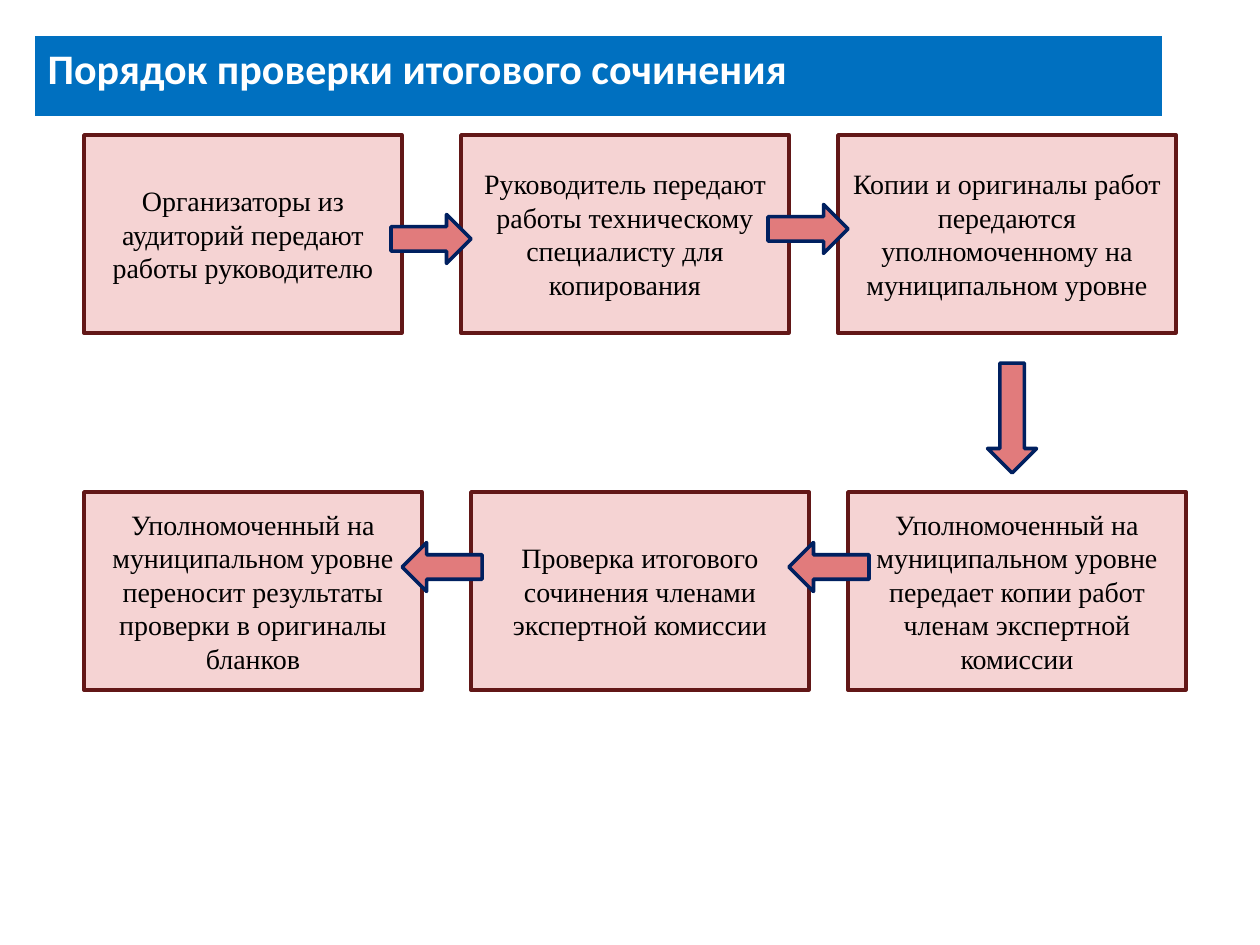
"""Build the slide on how final essays are checked."""
import pptx
import pptx.dml.color
import pptx.enum.shapes
import pptx.enum.text
import pptx.util

TITLE = "Порядок проверки итогового сочинения"
ROWS = [
    (135, [
        (84, 318, "Организаторы из аудиторий передают работы руководителю"),
        (461, 328, "Руководитель передают работы техническому специалисту для копирования"),
        (838, 338, "Копии и оригиналы работ передаются уполномоченному на муниципальном уровне"),
    ]),
    (492, [
        (848, 338, "Уполномоченный на муниципальном уровне передает копии работ членам экспертной комиссии"),
        (471, 338, "Проверка итогового сочинения членами экспертной комиссии"),
        (84, 338, "Уполномоченный на муниципальном уровне переносит результаты проверки в оригиналы бланков"),
    ]),
]
STEP_HEIGHT = 198
ARROWS = [
    (431, 239, 80, 0), (808, 229, 80, 0), (1012, 418, 110, 90),
    (829, 567, 80, 180), (442, 567, 80, 180),
]
ARROW_HEIGHT = 49
COLORS = {
    "banner": "0070C0", "banner_text": "FFFFFF",
    "step": "F5D3D3", "step_line": "621717", "step_text": "000000",
    "arrow": "E17B7C", "arrow_line": "002060",
}
TITLE_FONT = {"name": "Calibri", "size": pptx.util.Pt(24), "bold": True}
STEP_FONT = {"name": "Times New Roman", "size": pptx.util.Pt(16), "bold": False}
SHAPES = pptx.enum.shapes.MSO_SHAPE
ANCHOR = pptx.enum.text.MSO_ANCHOR
ALIGN = pptx.enum.text.PP_ALIGN


def px(length):
    return round(length * 914400 / 126)


def color(name):
    return pptx.dml.color.RGBColor.from_string(COLORS[name])


def paint(shape, fill):
    shape.fill.solid()
    shape.fill.fore_color.rgb = color(fill)


def write(shape, text, font, text_color, anchor, align):
    frame = shape.text_frame
    frame.text = text
    settings = {
        "word_wrap": True, "vertical_anchor": anchor,
        "auto_size": pptx.enum.text.MSO_AUTO_SIZE.NONE,
    }
    for name, value in settings.items():
        setattr(frame, name, value)
    paragraph = frame.paragraphs[0]
    paragraph.alignment = align
    span = paragraph.runs[0]
    for name, value in font.items():
        setattr(span.font, name, value)
    span.font.color.rgb = color(text_color)


def add_block(page, kind, left, top, width, height, role):
    block = page.shapes.add_shape(kind, px(left), px(top), px(width), px(height))
    block.shadow.inherit = False
    paint(block, role)
    block.line.color.rgb = color(role + "_line")
    block.line.width = pptx.util.Pt(2)
    return block


def main():
    deck = pptx.Presentation()
    deck.slide_width, deck.slide_height = px(1260), px(945)
    page = deck.slides.add_slide(deck.slide_layouts[5])

    banner = page.shapes.title
    place = {"left": 35, "top": 36, "width": 1127, "height": 80}
    for name, value in place.items():
        setattr(banner, name, px(value))
    paint(banner, "banner")
    write(banner, TITLE, TITLE_FONT, "banner_text", ANCHOR.TOP, ALIGN.LEFT)

    for top, steps in ROWS:
        for left, width, text in steps:
            box = add_block(page, SHAPES.RECTANGLE, left, top, width, STEP_HEIGHT, "step")
            write(box, text, STEP_FONT, "step_text", ANCHOR.MIDDLE, ALIGN.CENTER)

    for center_x, center_y, length, angle in ARROWS:
        arrow = add_block(page, SHAPES.RIGHT_ARROW, center_x - length / 2,
                          center_y - ARROW_HEIGHT / 2, length, ARROW_HEIGHT, "arrow")
        arrow.rotation = angle

    deck.save("out.pptx")


if __name__ == "__main__":
    main()
